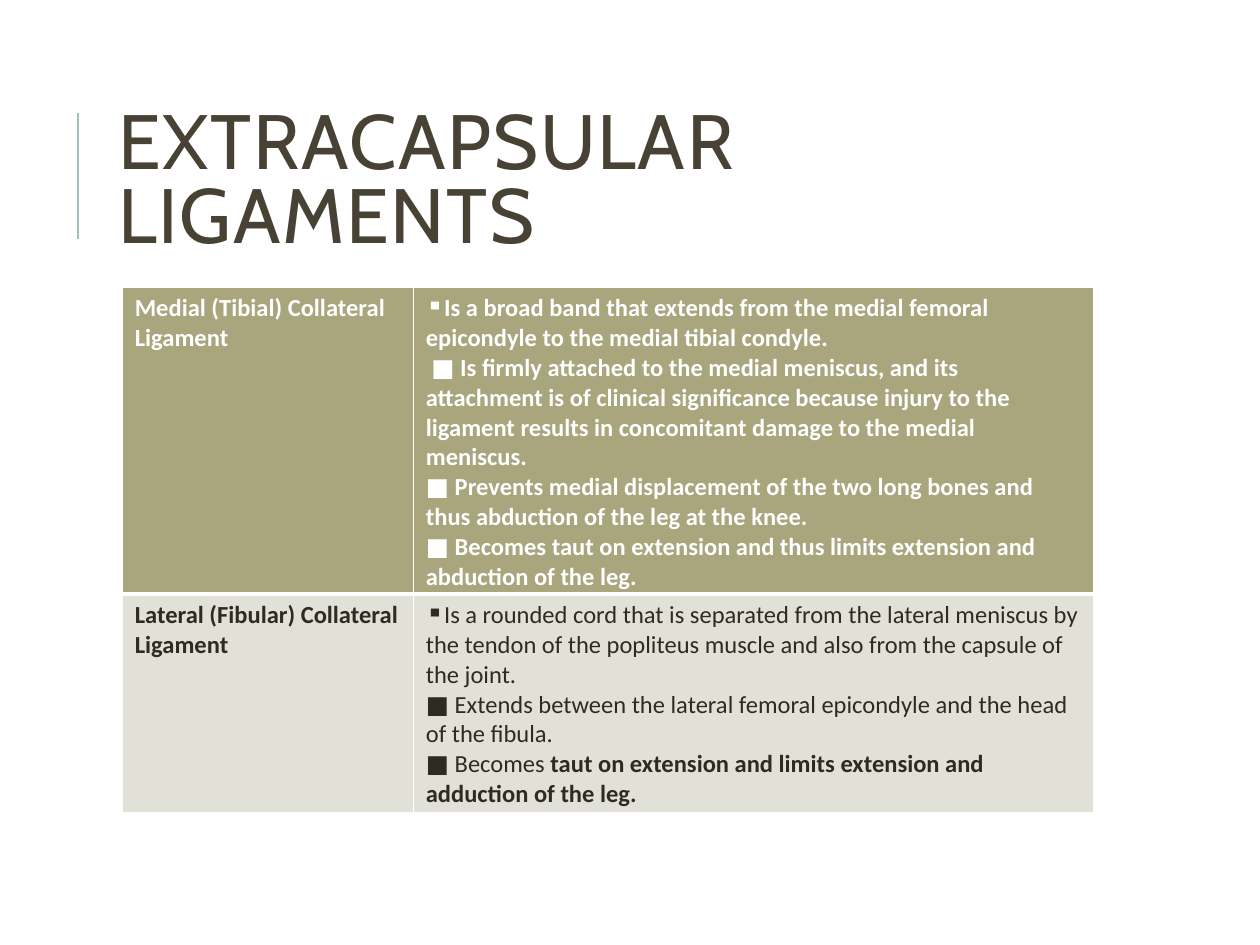
"""Build the slide on extracapsular ligaments, laid out on a grid of 100 by 75 units."""
from typing import NamedTuple

from lxml.etree import SubElement
from pptx import Presentation
from pptx.dml.color import RGBColor
from pptx.enum.shapes import MSO_CONNECTOR
from pptx.enum.text import MSO_ANCHOR
from pptx.oxml import parse_xml
from pptx.oxml.ns import nsdecls, qn
from pptx.util import Inches, Pt

WHITE = RGBColor(0xFF, 0xFF, 0xFF)
TEAL = RGBColor(0x9C, 0xBE, 0xBD)
BROWN = RGBColor(0x47, 0x42, 0x33)
OLIVE = RGBColor(0xA9, 0xA5, 0x7C)
PALE = RGBColor(0xE2, 0xE1, 0xD7)
DARK = RGBColor(0x2E, 0x2B, 0x21)


class Para(NamedTuple):
    """Plain text, a bold ending and an optional bullet."""
    text: str
    strong: str = ""
    mark: str = ""


class Band(NamedTuple):
    """One table row with its colours and lower border."""
    name: str
    notes: list[Para]
    high: float
    fill: RGBColor
    ink: RGBColor
    bold: bool
    base: float


BANDS = [
    Band("Medial (Tibial) Collateral Ligament", [
        Para("Is a broad band that extends from the medial femoral epicondyle "
             "to the medial tibial condyle.", mark="▪"),
        Para(" ■ Is firmly attached to the medial meniscus, and its attachment is of "
             "clinical significance because injury to the ligament results in "
             "concomitant damage to the medial meniscus."),
        Para("■ Prevents medial displacement of the two long bones and thus "
             "abduction of the leg at the knee."),
        Para("■ Becomes taut on extension and thus limits extension and "
             "abduction of the leg."),
    ], 15.8, OLIVE, WHITE, True, 3),
    Band("Lateral (Fibular) Collateral Ligament", [
        Para("Is a rounded cord that is separated from the lateral meniscus by the "
             "tendon of the popliteus muscle and also from the capsule of the joint.",
             mark="▪"),
        Para("■ Extends between the lateral femoral epicondyle and the head of the fibula."),
        Para("■ Becomes ", "taut on extension and limits extension and "
             "adduction of the leg."),
    ], 8.8, PALE, DARK, False, 1),
]


def unit(count: float) -> int:
    """Turn grid units into a length."""
    return Inches(count / 10)


def edge(cell, side: str, width: float, place: int) -> None:
    """Give one side of a cell a white border."""
    line = parse_xml(
        f'<a:{side} {nsdecls("a")} w="{Pt(width)}"><a:solidFill>'
        f'<a:srgbClr val="{WHITE}"/></a:solidFill></a:{side}>')
    cell._tc.get_or_add_tcPr().insert(place, line)


def write(cell, paras: list[Para], band: Band, bold: bool) -> None:
    """Fill a cell with paragraphs, colour and borders."""
    cell.fill.solid()
    cell.fill.fore_color.rgb = band.fill
    for place, side in enumerate(("lnL", "lnR", "lnT", "lnB")):
        edge(cell, side, band.base if side == "lnB" else 1, place)
    frame = cell.text_frame
    for i, para in enumerate(paras):
        line = frame.add_paragraph() if i else frame.paragraphs[0]
        line.text = para.text
        if para.strong:
            line.add_run().text = para.strong
        if para.mark:
            SubElement(line._p.get_or_add_pPr(), qn("a:buChar"), char=para.mark)
        for j, run in enumerate(line.runs):
            font = run.font
            font.name, font.size = "Calibri", Pt(14)
            font.bold = bold or j > 0
            font.color.rgb = band.ink


def rule(slide) -> None:
    """Draw the upright line beside the title."""
    line = slide.shapes.add_connector(
        MSO_CONNECTOR.STRAIGHT, unit(6.2), unit(19), unit(6.2), unit(9))
    line.line.color.rgb, line.line.width = TEAL, Pt(1.5)
    SubElement(line._element.spPr, qn("a:effectLst"))


def title(slide, text: str) -> None:
    """Set the slide title."""
    box = slide.shapes.add_textbox(unit(8.4), unit(6.4), unit(79.7), unit(16.4))
    frame = box.text_frame
    frame.word_wrap, frame.vertical_anchor = True, MSO_ANCHOR.MIDDLE
    frame.text = text
    line = frame.paragraphs[0]
    line.line_spacing = 0.8
    run = line.runs[0]
    run.font.name, run.font.size = "Cabin", Pt(44)
    run.font.color.rgb = BROWN
    run._r.get_or_add_rPr().set("spc", "100")


def grid(slide, bands: list[Band]) -> None:
    """Draw the table of ligaments."""
    shape = slide.shapes.add_table(
        len(bands), 2, unit(9.7), unit(22.8), unit(77.1), unit(39.3))
    table = shape.table
    for col, wide in zip(table.columns, (23.1, 54)):
        col.width = unit(wide)
    for i, band in enumerate(bands):
        table.rows[i].height = unit(band.high)
        write(table.cell(i, 0), [Para(band.name)], band, True)
        write(table.cell(i, 1), band.notes, band, band.bold)
    shape.height = unit(39.3)


def main() -> None:
    """Build and save the deck."""
    deck = Presentation()
    deck.slide_width, deck.slide_height = unit(100), unit(75)
    slide = deck.slides.add_slide(deck.slide_layouts[6])
    rule(slide)
    title(slide, "EXTRACAPSULAR LIGAMENTS")
    grid(slide, BANDS)
    deck.save("out.pptx")


if __name__ == "__main__":
    main()
